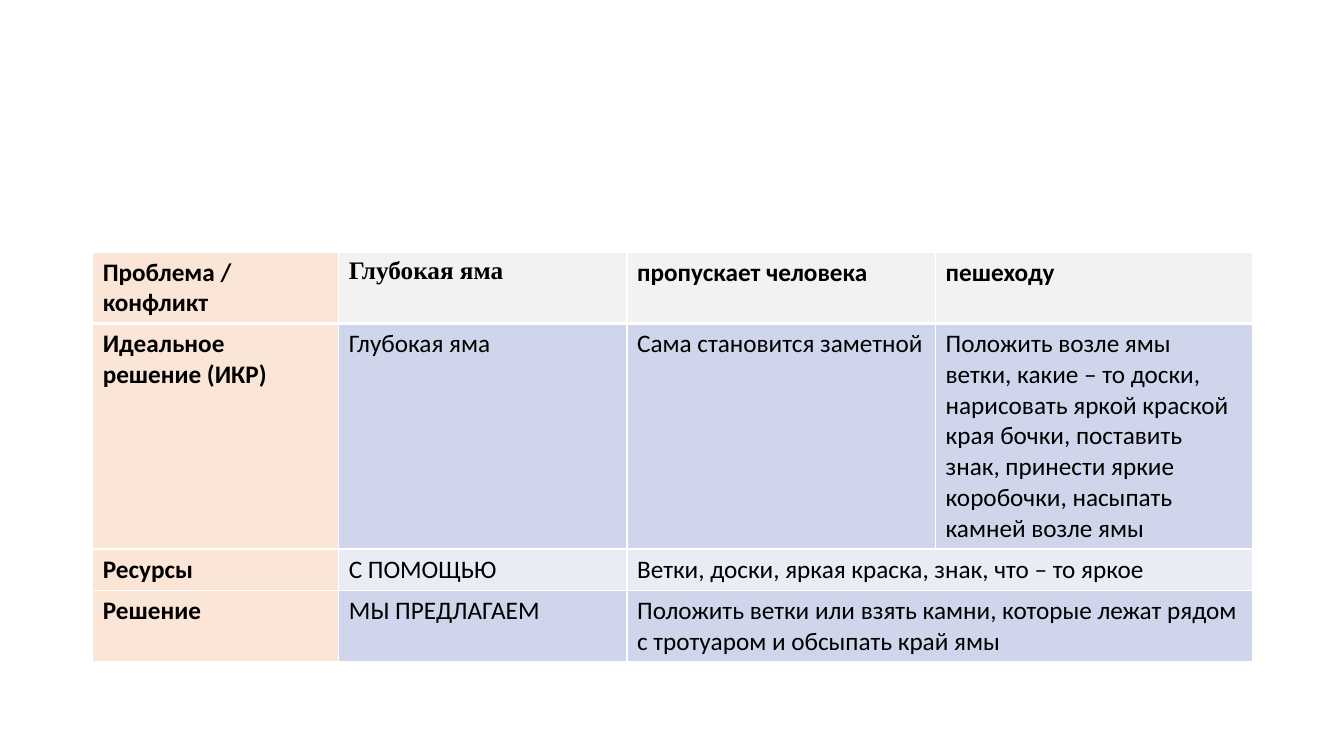
from pptx import Presentation
from pptx import util as u
from pptx.dml import color
from pptx.oxml import ns
from lxml import etree

PEACH, GRAY, BLUE, PALE = "FBE5D6", "F2F2F2", "CFD5EA", "E9EBF5"
COLUMNS = [2.44, 2.86, 3.06, 3.14]
ROWS = [
    (0.71, GRAY, ["Проблема / конфликт", "Глубокая яма", "пропускает человека", "пешеходу"]),
    (2.23, BLUE, ["Идеальное решение (ИКР)", "Глубокая яма", "Сама становится заметной",
                  "Положить возле ямы ветки, какие – то доски, нарисовать яркой краской края бочки, "
                  "поставить знак, принести яркие коробочки, насыпать камней возле ямы"]),
    (0.41, PALE, ["Ресурсы", "С ПОМОЩЬЮ", "Ветки, доски, яркая краска, знак, что – то яркое"]),
    (0.71, BLUE, ["Решение", "МЫ ПРЕДЛАГАЕМ",
                  "Положить ветки или взять камни, которые лежат рядом с тротуаром и обсыпать край ямы"]),
]


def rgb(value):
    return color.RGBColor.from_string(value)


def write(frame, words, font="Calibri", size=18, bold=False, ink="000000"):
    span = frame.paragraphs[0].add_run()
    span.text = words
    span.font.name = font
    span.font.size = u.Pt(size)
    span.font.bold = bold
    span.font.color.rgb = rgb(ink)


class Board:
    line = "FFFFFF"

    def __init__(self, deck):
        self.deck = deck
        self.page = deck.slides.add_slide(deck.slide_layouts[6])

    def border(self, cell, **widths):
        properties = cell._tc.get_or_add_tcPr()
        for side in "LRTB":
            edge = etree.SubElement(properties, ns.qn(f"a:ln{side}"), w=str(u.Pt(widths.get(side, 1))))
            fill = etree.SubElement(edge, ns.qn("a:solidFill"))
            etree.SubElement(fill, ns.qn("a:srgbClr"), val=self.line)

    def table(self, left, top, columns, rows):
        frame = self.page.shapes.add_table(
            len(rows), len(columns),
            int(self.deck.slide_width * left), int(self.deck.slide_height * top),
            u.Inches(sum(columns)), u.Inches(sum(height for height, *_ in rows)))
        table = frame.table
        table.horz_banding = False
        for column, width in zip(table.columns, columns):
            column.width = u.Inches(width)
        for row, (height, fill, words) in enumerate(rows):
            table.rows[row].height = u.Inches(height)
            if len(words) < len(columns):
                table.cell(row, len(words) - 1).merge(table.cell(row, len(columns) - 1))
            for column in range(len(columns)):
                cell = table.cell(row, column)
                self.border(cell, T=3 if row == 1 else 1, B=3 if row == 0 else 1)
                cell.fill.solid()
                cell.fill.fore_color.rgb = rgb(PEACH if column == 0 else fill)
                if column < len(words):
                    write(cell.text_frame, words[column], bold=row == 0 or column == 0,
                          font="Times New Roman" if (row, column) == (0, 1) else "Calibri")


def main():
    deck = Presentation()
    deck.slide_width, deck.slide_height = u.Inches(13.33), u.Inches(7.5)
    Board(deck).table(0.069, 1 / 3, COLUMNS, ROWS)
    deck.save("out.pptx")


if __name__ == "__main__":
    main()
